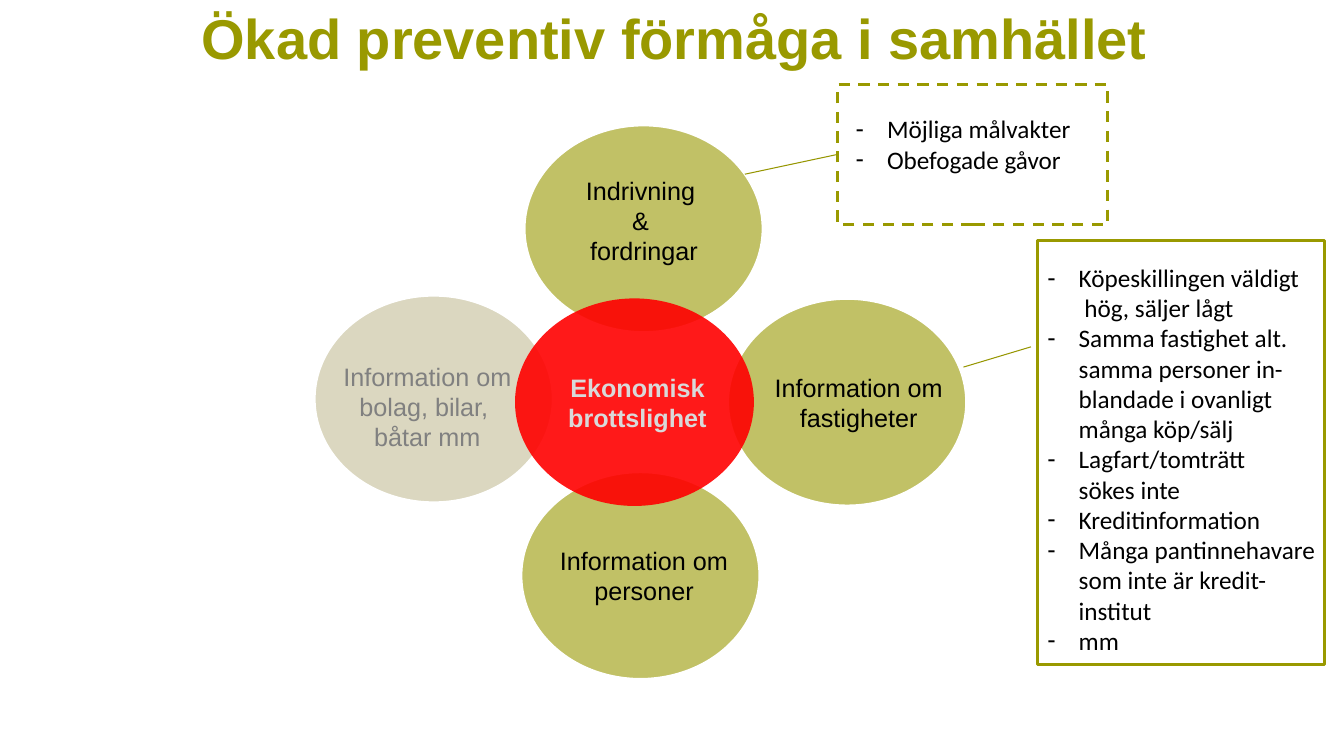
"""Build a slide on preventing economic crime through better information."""
import pptx
import pptx.util
import pptx.dml.color
import pptx.enum.dml
import pptx.enum.shapes
import pptx.enum.text
import lxml.etree

Cm, Pt = pptx.util.Cm, pptx.util.Pt
KIND = pptx.enum.shapes.MSO_SHAPE
ALIGN = pptx.enum.text.PP_ALIGN
ANCHOR = pptx.enum.text.MSO_ANCHOR
NS = "{http://schemas.openxmlformats.org/drawingml/2006/main}"
OLIVE = "999900"


def tint(hue):
    return pptx.dml.color.RGBColor.from_string(hue)


def write(shape, paras, face="Arial", size=18, hue="000000", bold=False,
          align=ALIGN.CENTER, anchor=ANCHOR.TOP, bullet=None):
    frame = shape.text_frame
    frame.word_wrap = True
    frame.auto_size = pptx.enum.text.MSO_AUTO_SIZE.NONE
    frame.vertical_anchor = anchor
    for spot, text in enumerate(paras):
        para = frame.paragraphs[0] if spot == 0 else frame.add_paragraph()
        para.text = text
        para.alignment = align
        para.space_before = Pt(0)
        if bullet:
            props = para._p.get_or_add_pPr()
            props.set("marL", str(Cm(0.79)))
            props.set("indent", str(-Cm(0.79)))
            lxml.etree.SubElement(props, NS + "buChar", char=bullet)
        for run in para.runs:
            run.font.name = face
            run.font.size = Pt(size)
            run.font.bold = bold
            run.font.color.rgb = tint(hue)


deck = pptx.Presentation()
deck.slide_width, deck.slide_height = Cm(33.87), Cm(19.05)
slide = deck.slides.add_slide(deck.slide_layouts[3])
shapes = slide.shapes
title, gifts, deals = slide.placeholders

title.left, title.top, title.width, title.height = Cm(0.05), Cm(-0.05), Cm(33.87), Cm(1.96)
write(title, ["Ökad preventiv förmåga i samhället"], size=40, hue=OLIVE, bold=True,
      anchor=ANCHOR.MIDDLE)

ovals = [
    (13.21, 3.15, OLIVE, 60),
    (18.34, 7.52, OLIVE, 60),
    (13.13, 11.89, OLIVE, 60),
    (7.92, 7.44, "C4BD97", 60),
    (12.98, 7.52, "FF0000", 90),
]
for left, top, hue, alpha in ovals:
    oval = shapes.add_shape(KIND.OVAL, Cm(left), Cm(top), Cm(6.02), Cm(5.23))
    oval.shadow.inherit = False
    oval.fill.solid()
    oval.fill.fore_color.rgb = tint(hue)
    shade = oval._element.spPr.find(f"{NS}solidFill/{NS}srgbClr")
    lxml.etree.SubElement(shade, NS + "alpha", val=str(alpha * 1000))
    if hue == "FF0000":
        oval.line.fill.background()
    else:
        oval.line.color.rgb = tint("FFFFFF")
        oval.line.width = Pt(2)

labels = [
    (18.39, 9.25, 6.5, 1.8, ["Information om fastigheter"], {}),
    (12.98, 4.29, 6.5, 2.57, ["Indrivning ", "& ", "fordringar"], {}),
    (13.84, 9.25, 4.45, 1.8, ["Ekonomisk brottslighet"], {"hue": "D9D9D9", "bold": True}),
    (12.98, 13.61, 6.5, 1.8, ["Information om personer"], {}),
    (7.52, 8.97, 6.5, 2.57, ["Information om", "bolag, bilar, ", "båtar mm"], {"hue": "808080"}),
]
for left, top, width, height, paras, style in labels:
    label = shapes.add_textbox(Cm(left), Cm(top), Cm(width), Cm(height))
    write(label, paras, **style)

frames = [
    (21.11, 2.13, 6.81, 3.53, pptx.enum.dml.MSO_LINE.DASH),
    (26.14, 6.07, 7.24, 10.67, pptx.enum.dml.MSO_LINE.SOLID),
]
for left, top, width, height, dash in frames:
    box = shapes.add_shape(KIND.RECTANGLE, Cm(left), Cm(top), Cm(width), Cm(height))
    box.shadow.inherit = False
    box.fill.background()
    box.line.color.rgb = tint(OLIVE)
    box.line.width = Pt(2)
    box.line.dash_style = dash

lists = [
    (gifts, 21.31, 2.74, 5.97, 2.5, ["Möjliga målvakter", "Obefogade gåvor"]),
    (deals, 26.14, 6.48, 7.49, 10.26, [
        "Köpeskillingen väldigt \n hög, säljer lågt",
        "Samma fastighet alt. \nsamma personer in-\nblandade i ovanligt \nmånga köp/sälj",
        "Lagfart/tomträtt \nsökes inte",
        "Kreditinformation",
        "Många pantinnehavare \nsom inte är kredit-\ninstitut",
        "mm",
    ]),
]
for body, left, top, width, height, paras in lists:
    body.left, body.top, body.width, body.height = Cm(left), Cm(top), Cm(width), Cm(height)
    write(body, paras, face="Calibri", align=ALIGN.LEFT, bullet="-")

for ends in [(24.28, 9.25, 25.98, 8.74), (18.77, 4.39, 21.11, 3.89)]:
    link = shapes.add_connector(pptx.enum.shapes.MSO_CONNECTOR.STRAIGHT, *map(Cm, ends))
    link.line.color.rgb = tint("969600")
    link.line.width = Pt(0.75)
    lxml.etree.SubElement(link._element.spPr, NS + "effectLst")

deck.save("out.pptx")
